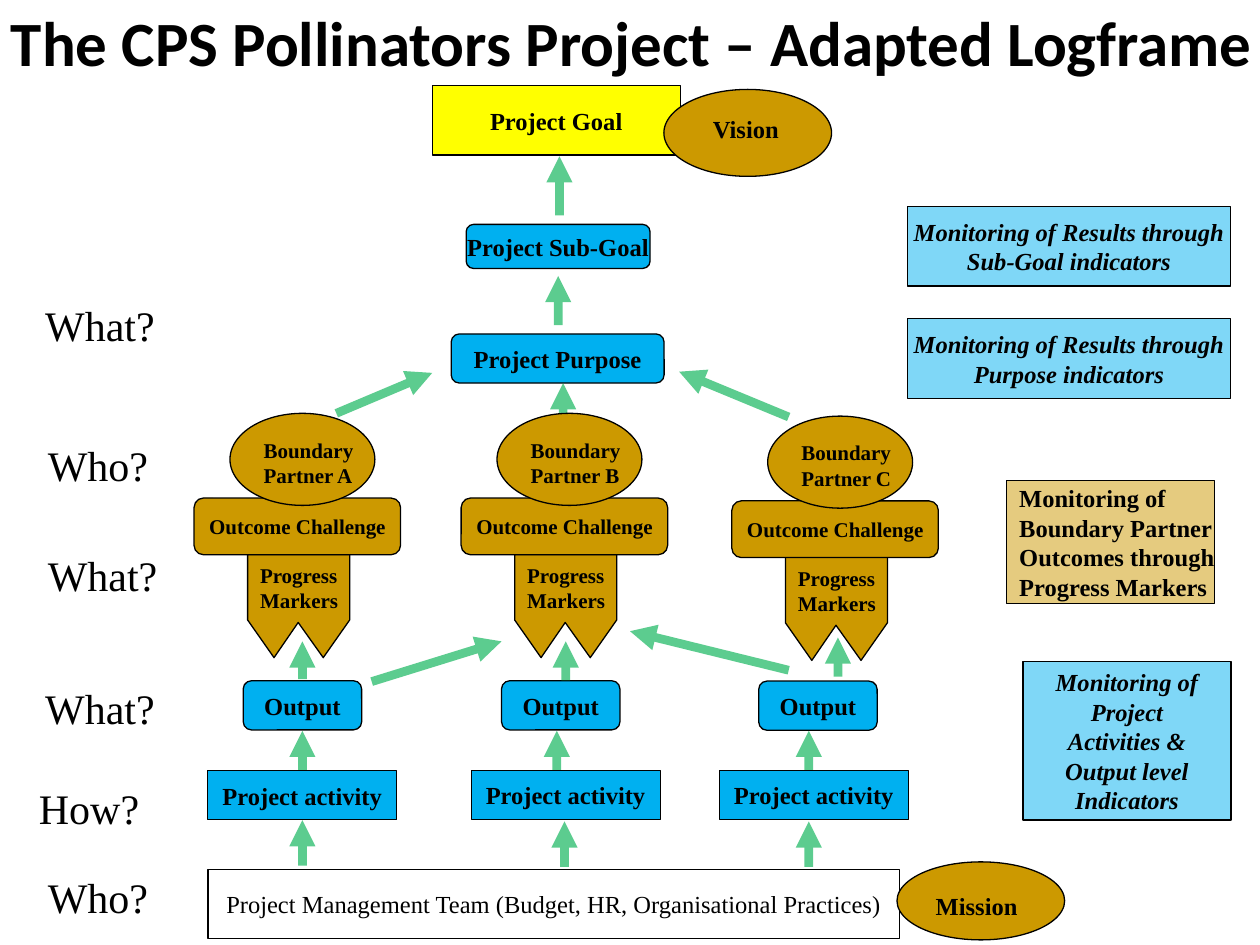
from lxml.etree import SubElement
from pptx import Presentation
from pptx.dml.color import RGBColor
from pptx.enum.shapes import MSO_CONNECTOR as LINK, MSO_SHAPE as SHAPE
from pptx.enum.text import MSO_ANCHOR as ANCHOR, PP_ALIGN as ALIGN
from pptx.oxml.ns import qn
from pptx.util import Pt

COLORS = {"black": "000000", "white": "FFFFFF", "yellow": "FFFF00",
          "blue": "00B0F0", "gold": "CC9900", "green": "00B050"}
SERIF = "Times New Roman"
BOLD = {"name": SERIF, "size": Pt(14), "bold": True}
PLAIN = {"name": SERIF, "size": Pt(14)}
ITALIC = {**BOLD, "italic": True}
SMALL = {**BOLD, "size": Pt(12)}
QUESTION = {"name": SERIF, "size": Pt(24)}
HEADING = {"name": "Calibri", "size": Pt(36), "bold": True}

# Content: all positions are left, top, width, height in points
TITLE = ("The CPS Pollinators Project – Adapted Logframe", (-14.4, -2.2, 751, 51.8))

QUESTIONS = [("What?", 18.7, 167.8), ("Who?", 20.2, 247.7), ("What?", 20.2, 310.3),
             ("What?", 18.7, 386.6), ("How?", 15.1, 443.5), ("Who?", 20.2, 494.6)]

GOALS = [  # text, outline, fill, position, format
    ("Project Goal", SHAPE.RECTANGLE, "yellow", (247, 49, 141.8, 39.6), BOLD),
    ("Project Sub-Goal", SHAPE.ROUNDED_RECTANGLE, "blue", (266.4, 128.2, 105.1, 25.2), BOLD),
    ("Project Purpose", SHAPE.ROUNDED_RECTANGLE, "blue", (257.8, 190.8, 121.7, 28.1), BOLD),
    ("Project Management Team (Budget, HR, Organisational Practices)",
     SHAPE.RECTANGLE, "white", (118.8, 496.8, 395.3, 39.6), PLAIN),
]
OUTPUTS = [(139, 389), (286.6, 389), (433.6, 389.2)]
ACTIVITIES = [(118.8, 440.4), (269.3, 440.2), (411.1, 440.2)]
PARTNERS = [("A", 110.9, 236.2), ("B", 263.5, 236.2), ("C", 418.2, 237.8)]

MONITORING = [  # lines, fill, position, format, alignment
    (["Monitoring of Results through", "Sub-Goal indicators"],
     "blue", (518.4, 118.1, 185, 45.4), ITALIC, ALIGN.CENTER),
    (["Monitoring of Results through", "Purpose indicators"],
     "blue", (518.4, 182.2, 185, 45.4), ITALIC, ALIGN.CENTER),
    (["Monitoring of", "Boundary Partner", "Outcomes through", "Progress Markers"],
     "gold", (575.3, 274.5, 118.8, 70.5), BOLD, ALIGN.LEFT),
    (["Monitoring of", "Project", "Activities &", "Output level", "Indicators"],
     "blue", (584.6, 378, 118.8, 90.7), ITALIC, ALIGN.CENTER),
]

UPWARD_ARROWS = [  # x, bottom, tip
    (319.7, 123.1, 89.3), (319, 185.8, 157.7), (321.8, 241.2, 218.9),
    (172.8, 388.1, 366.5), (323.3, 388.8, 366.5), (478.8, 386.6, 364.3),
    (172.8, 440, 417.6), (318.2, 440, 417.6), (462.2, 440, 417.6),
    (172.8, 494.6, 468.7), (322.6, 495.4, 469.4), (462.2, 495.4, 469.4),
]
SLANTED_ARROWS = [(192.2, 236.2, 247, 213.1), (450.7, 238.3, 388.1, 212.4),
                  (212.4, 389.5, 286.6, 366.5), (450.7, 383, 360, 360.7)]

deck = Presentation()
deck.slide_width, deck.slide_height = Pt(720), Pt(540)
slide = deck.slides.add_slide(deck.slide_layouts[6])
shapes = slide.shapes


def paint(fill, color, opacity=100):
    fill.solid()
    fill.fore_color.rgb = RGBColor.from_string(COLORS[color])
    if opacity < 100:
        rgb = fill._xPr.find(qn("a:solidFill"))[0]
        SubElement(rgb, qn("a:alpha"), val=str(opacity * 1000))


def write(holder, lines, fmt, align=ALIGN.CENTER, wrap=False, anchor=ANCHOR.MIDDLE, **margins):
    frame = holder.text_frame
    frame.word_wrap = wrap
    frame.vertical_anchor = anchor
    for side, gap in margins.items():
        setattr(frame, "margin_" + side, Pt(gap))
    for i, line in enumerate(lines):
        paragraph = frame.paragraphs[0] if i == 0 else frame.add_paragraph()
        paragraph.alignment = align
        run = paragraph.add_run()
        run.text = line
        for key, value in fmt.items():
            setattr(run.font, key, value)
        run.font.color.rgb = RGBColor.from_string(COLORS["black"])


def dress(outline, fill, opacity=100):
    outline.shadow.inherit = False
    paint(outline.fill, fill, opacity)
    paint(outline.line.fill, "black")
    outline.line.width = Pt(0.75)
    return outline


def add_box(kind, fill, place, opacity=100):
    return dress(shapes.add_shape(kind, *map(Pt, place)), fill, opacity)


def add_label(lines, place, fmt, **layout):
    write(shapes.add_textbox(*map(Pt, place)), lines, fmt, **layout)


def add_arrow(*ends):
    arrow = shapes.add_connector(LINK.STRAIGHT, *map(Pt, ends))
    arrow.line.width = Pt(5)
    paint(arrow.line.fill, "green", 63)
    SubElement(arrow.line._get_or_add_ln(), qn("a:tailEnd"), type="triangle")
    SubElement(arrow._element.spPr, qn("a:effectLst"))


def add_partner(letter, left, top):
    # Progress markers: a banner with two pointed feet
    x, y = left + 30.6, top + 80.6
    outline = [(58.3, 0), (58.3, 37.5), (43.2, 59), (28.9, 38.9), (15.1, 59), (0, 37.5)]
    builder = shapes.build_freeform(Pt(x), Pt(y))
    builder.add_line_segments([(Pt(x + dx), Pt(y + dy)) for dx, dy in outline])
    banner = dress(builder.convert_to_shape(), "gold")
    write(banner, ["Progress", "Markers"], SMALL, ALIGN.LEFT, bottom=24.4)
    # Challenge bar, then the partner on top of it
    bar = add_box(SHAPE.ROUNDED_RECTANGLE, "gold", (left, top + 48.4, 118, 32.4))
    write(bar, ["Outcome Challenge"], SMALL, ALIGN.LEFT)
    partner = add_box(SHAPE.OVAL, "gold", (left + 20.5, top, 82.8, 52.6))
    write(partner, ["Boundary", f"Partner {letter}"], SMALL, ALIGN.LEFT, top=7)


# Title and questions
add_label([TITLE[0]], TITLE[1], HEADING, wrap=True)
for question, left, top in QUESTIONS:
    add_label([question], (left, top, 77.8, 36), QUESTION, align=ALIGN.LEFT, anchor=ANCHOR.TOP)

# Goals, outputs and activities
outputs = [("Output", SHAPE.ROUNDED_RECTANGLE, "blue", (*corner, 67.7, 28.1), BOLD)
           for corner in OUTPUTS]
activities = [("Project activity", SHAPE.RECTANGLE, "blue", (*corner, 108, 28.1), BOLD)
              for corner in ACTIVITIES]
for text, kind, fill, place, fmt in GOALS + outputs + activities:
    write(add_box(kind, fill, place), [text], fmt)

# Monitoring notes
for lines, fill, place, fmt, align in MONITORING:
    write(add_box(SHAPE.RECTANGLE, fill, place, 50), lines, fmt, align)

# Arrows
for x, bottom, tip in UPWARD_ARROWS:
    add_arrow(x, bottom, x, tip)
for ends in SLANTED_ARROWS:
    add_arrow(*ends)

# Vision and mission
mission = add_box(SHAPE.OVAL, "gold", (512.6, 492.5, 95.8, 44.6))
write(mission, ["Mission"], BOLD, top=9.3, right=11.8)
add_box(SHAPE.OVAL, "gold", (379.4, 51.1, 95.8, 49.7))
add_label(["Vision"], (400.3, 61.9, 52.6, 24.5), BOLD, align=ALIGN.LEFT, anchor=ANCHOR.TOP)

# Boundary partners
for letter, left, top in PARTNERS:
    add_partner(letter, left, top)

deck.save("out.pptx")
